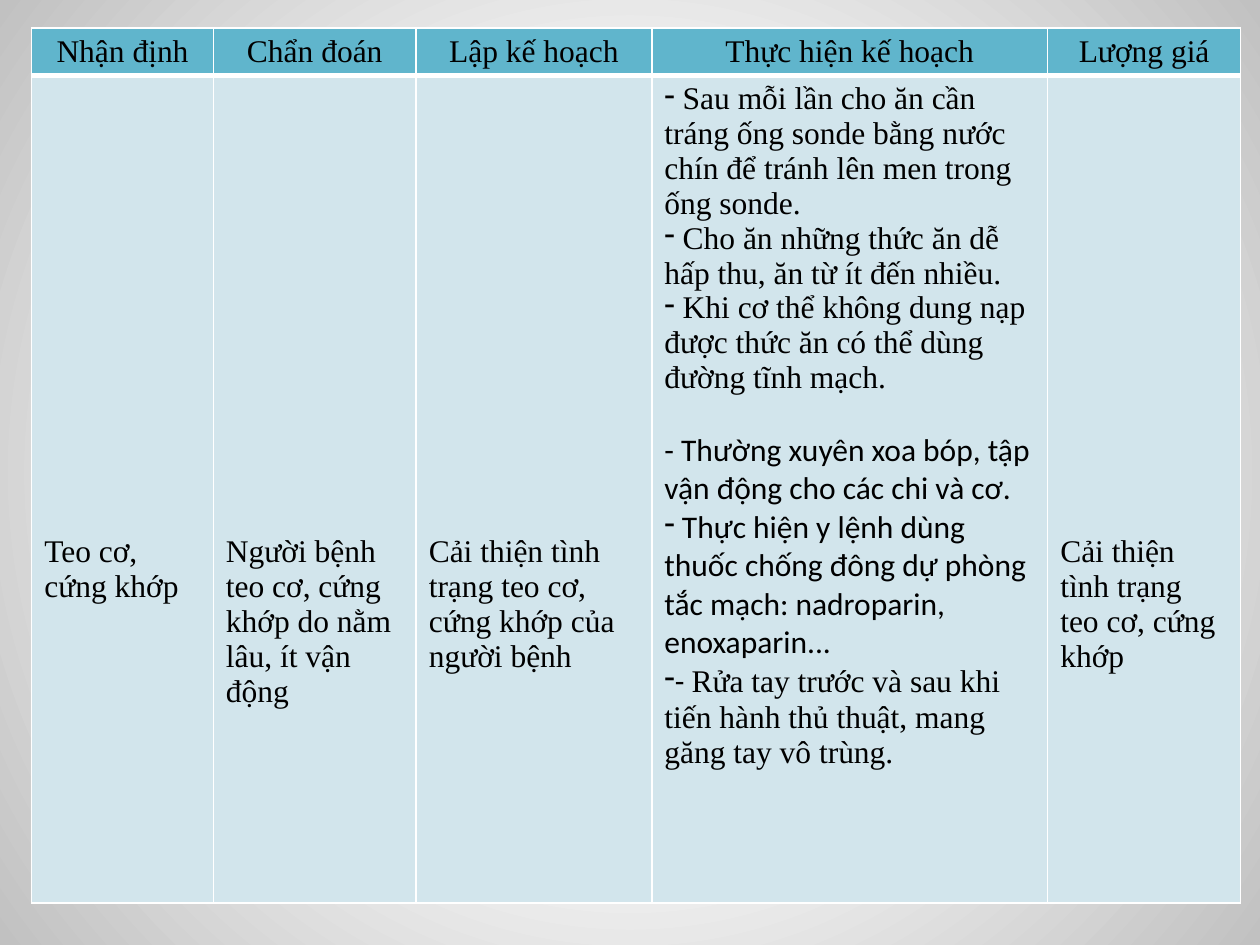
from dataclasses import dataclass

from lxml import etree
from pptx import Presentation
from pptx.dml.color import RGBColor
from pptx.enum import text
from pptx.oxml import ns
from pptx.util import Cm, Pt


@dataclass(frozen=True)
class Theme:
    serif: str = "Times New Roman"
    sans: str = "Calibri"
    size: int = 18
    ink: str = "000000"
    head: str = "60B5CC"
    body: str = "D2E5EC"
    white: str = "FFFFFF"
    edge: str = "C1C1C1"
    thin: int = 1
    thick: int = 3


THEME = Theme()
WIDTHS = (3.66, 4.09, 4.75, 7.98, 3.89)
HEIGHTS = (0.94, 16.69)
DROP = 9.26  # top margin that sets the short notes beside the care steps
GAP = 20.5

HEADS = ("Nhận định", "Chẩn đoán", "Lập kế hoạch", "Thực hiện kế hoạch", "Lượng giá")
NOTES = {
    0: "Teo cơ, cứng khớp",
    1: "Người bệnh teo cơ, cứng khớp do nằm lâu, ít vận động",
    2: "Cải thiện tình trạng teo cơ, cứng khớp của người bệnh",
    4: "Cải thiện tình trạng teo cơ, cứng khớp",
}
STEP_COL = 3
# Each step: bullet, space before, runs of (text, font)
STEPS = (
    (True, 0, [(" Sau mỗi lần cho ăn cần tráng ống sonde bằng nước chín "
                "để tránh lên men trong ống sonde.", THEME.serif)]),
    (True, 0, [(" Cho ăn những thức ăn dễ hấp thu, ăn từ ít đến nhiều.", THEME.serif)]),
    (True, 0, [(" Khi cơ thể không dung nạp được thức ăn có thể dùng "
                "đường tĩnh mạch.", THEME.serif)]),
    (False, GAP, [("- Thường xuyên xoa bóp, tập vận động cho các chi và cơ.", THEME.sans)]),
    (True, 0, [(" Thực hiện y lệnh dùng thuốc chống đông dự phòng tắc mạch: "
                "nadroparin, enoxaparin...", THEME.sans)]),
    (True, 0, [("- ", THEME.sans),
               ("Rửa tay trước và sau khi tiến hành thủ thuật, "
                "mang găng tay vô trùng.", THEME.serif)]),
)


def color(code):
    return RGBColor.from_string(code)


def paint_back(slide):
    """Fill the background with a round gradient, light in the middle."""
    fill = slide.background.fill
    fill.gradient()
    for stop, (place, code) in zip(fill.gradient_stops, ((0.35, THEME.white), (1, THEME.edge))):
        stop.position = place
        stop.color.rgb = color(code)
    grad = slide.element.find(".//" + ns.qn("a:gradFill"))
    line = grad.find(ns.qn("a:lin"))
    if line is not None:
        grad.remove(line)
    round_ = etree.SubElement(grad, ns.qn("a:path"), {"path": "circle"})
    etree.SubElement(round_, ns.qn("a:fillToRect"), dict.fromkeys("ltrb", "50000"))


def set_edges(cell, top, bottom):
    props = cell._tc.get_or_add_tcPr()
    sides = (("L", THEME.thin), ("R", THEME.thin), ("T", top), ("B", bottom))
    for spot, (side, width) in enumerate(sides):
        line = etree.Element(ns.qn("a:ln" + side), {"w": str(Pt(width))})
        solid = etree.SubElement(line, ns.qn("a:solidFill"))
        etree.SubElement(solid, ns.qn("a:srgbClr"), {"val": THEME.white})
        props.insert(spot, line)


def style_cell(cell, fill, top, bottom):
    cell.fill.solid()
    cell.fill.fore_color.rgb = color(fill)
    set_edges(cell, top, bottom)


def add_run(para, words, font):
    run = para.add_run()
    run.text = words
    run.font.name = font
    run.font.size = Pt(THEME.size)
    run.font.bold = False
    run.font.color.rgb = color(THEME.ink)


def add_dash(para):
    props = para._p.get_or_add_pPr()
    props.set("marL", "0")
    props.set("indent", "0")
    etree.SubElement(props, ns.qn("a:buChar"), {"char": "-"})


def fill_steps(cell):
    frame = cell.text_frame
    for rank, (dash, gap, runs) in enumerate(STEPS):
        para = frame.add_paragraph() if rank else frame.paragraphs[0]
        if gap:
            para.space_before = Pt(gap)
        if dash:
            add_dash(para)
        for words, font in runs:
            add_run(para, words, font)


def add_plan(slide):
    """Add the care plan table."""
    table = slide.shapes.add_table(2, len(WIDTHS), Cm(0.64), Cm(0.56),
                                   Cm(sum(WIDTHS)), Cm(sum(HEIGHTS))).table
    table.horz_banding = False
    for row, height in zip(table.rows, HEIGHTS):
        row.height = Cm(height)
    for col, width in enumerate(WIDTHS):
        table.columns[col].width = Cm(width)
        head, body = table.cell(0, col), table.cell(1, col)
        style_cell(head, THEME.head, THEME.thin, THEME.thick)
        style_cell(body, THEME.body, THEME.thick, THEME.thin)
        para = head.text_frame.paragraphs[0]
        para.alignment = text.PP_ALIGN.CENTER
        add_run(para, HEADS[col], THEME.serif)
        if col == STEP_COL:
            fill_steps(body)
        else:
            body.margin_top = Cm(DROP)
            add_run(body.text_frame.paragraphs[0], NOTES[col], THEME.serif)


def main():
    deck = Presentation()
    deck.slide_width, deck.slide_height = Cm(25.4), Cm(19.05)
    slide = deck.slides.add_slide(deck.slide_layouts[6])
    paint_back(slide)
    add_plan(slide)
    deck.save("out.pptx")


if __name__ == "__main__":
    main()
